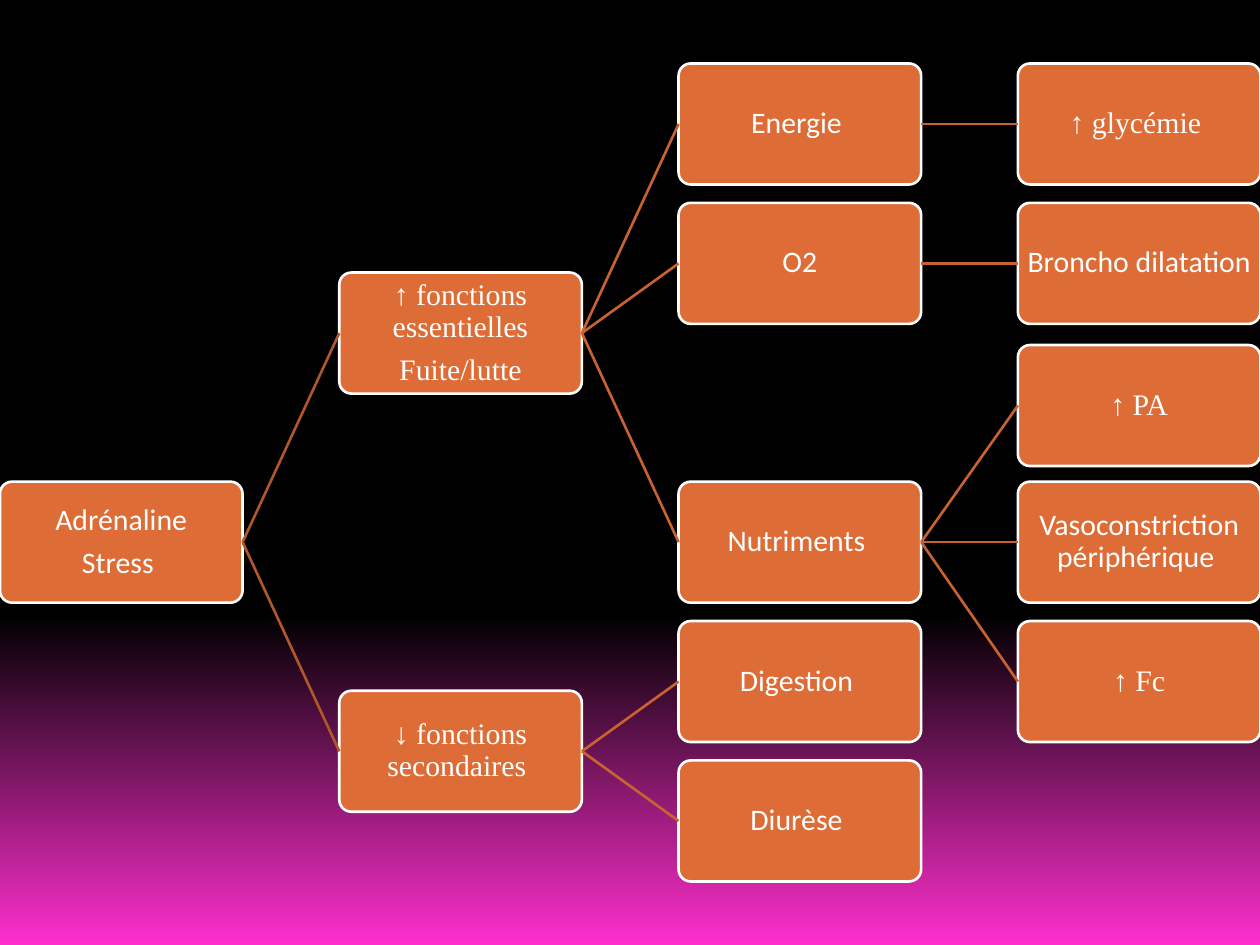
import lxml.etree
import pptx
import pptx.dml.color
import pptx.enum.shapes
import pptx.enum.text
import pptx.oxml.ns
import pptx.util

Cm, Pt = pptx.util.Cm, pptx.util.Pt
RGB = pptx.dml.color.RGBColor.from_string

# Effects of adrenaline: key -> (column, row, paragraphs)
EFFECTS = {
    "adrenaline": (0, 3, ["Adrénaline", "Stress "]),
    "essential": (1, 1.5, ["↑ fonctions essentielles", "Fuite/lutte"]),
    "secondary": (1, 4.5, ["↓ fonctions secondaires "]),
    "energy": (2, 0, ["Energie "]),
    "oxygen": (2, 1, ["O2"]),
    "nutrients": (2, 3, ["Nutriments "]),
    "digestion": (2, 4, ["Digestion "]),
    "diuresis": (2, 5, ["Diurèse "]),
    "glycaemia": (3, 0, ["↑ glycémie "]),
    "bronchi": (3, 1, ["Broncho dilatation "]),
    "pressure": (3, 2.02, ["↑ PA"]),
    "vessels": (3, 3, ["Vasoconstriction périphérique "]),
    "heart_rate": (3, 4, ["↑ Fc"]),
}
BRANCHES = {
    "adrenaline": ["essential", "secondary"],
    "essential": ["energy", "oxygen", "nutrients"],
    "secondary": ["digestion", "diuresis"],
    "energy": ["glycaemia"],
    "oxygen": ["bronchi"],
    "nutrients": ["pressure", "vessels", "heart_rate"],
}

THEME = {
    "box": RGB("DE6C36"),
    "text": RGB("FFFFFF"),
    "root_branch": RGB("B2562B"),
    "branch": RGB("C96231"),
    "background": [(0.65, RGB("000000")), (1, RGB("FF2FCD"))],
    "line": Pt(1.5),
    "size": Pt(17),
    "font": "Calibri",
    "arrow_font": "Times New Roman",
    "paragraph_gap": Pt(6),
}
FRAME_FORMAT = {
    "word_wrap": True,
    "vertical_anchor": pptx.enum.text.MSO_ANCHOR.MIDDLE,
    **{f"margin_{side}": Cm(0.1) for side in ("left", "top", "right", "bottom")},
}
PARAGRAPH_FORMAT = {
    "alignment": pptx.enum.text.PP_ALIGN.CENTER,
    "line_spacing": 0.9,
    "space_after": Pt(0),
}

# Grid, in centimetres
TOP = 1.28
COLUMN_STEP, ROW_STEP = 6.84, 2.81
BOX_WIDTH, BOX_HEIGHT = 4.89, 2.44
LEFT_SIDE, RIGHT_SIDE = 1, 3


def apply_format(target, values):
    for name, value in values.items():
        setattr(target, name, value)


def add_effect(slide, column, row, lines):
    box = slide.shapes.add_shape(
        pptx.enum.shapes.MSO_SHAPE.ROUNDED_RECTANGLE,
        Cm(column * COLUMN_STEP), Cm(TOP + row * ROW_STEP),
        Cm(BOX_WIDTH), Cm(BOX_HEIGHT))
    box.adjustments[0] = 0.1
    box.shadow.inherit = False
    box.fill.solid()
    box.fill.fore_color.rgb = THEME["box"]
    box.line.color.rgb = THEME["text"]
    box.line.width = THEME["line"]

    frame = box.text_frame
    apply_format(frame, FRAME_FORMAT)
    font_name = THEME["arrow_font" if lines[0][0] in "↑↓" else "font"]
    for index, line in enumerate(lines):
        paragraph = frame.add_paragraph() if index else frame.paragraphs[0]
        paragraph.text = line
        apply_format(paragraph, PARAGRAPH_FORMAT)
        if index:
            paragraph.space_before = THEME["paragraph_gap"]
        apply_format(paragraph.runs[0].font, {"name": font_name, "size": THEME["size"]})
        paragraph.runs[0].font.color.rgb = THEME["text"]
    return box


def add_branch(slide, cause, effect, color):
    branch = slide.shapes.add_connector(
        pptx.enum.shapes.MSO_CONNECTOR.STRAIGHT, 0, 0, 0, 0)
    branch.begin_connect(cause, RIGHT_SIDE)
    branch.end_connect(effect, LEFT_SIDE)
    branch.line.color.rgb = color
    branch.line.width = THEME["line"]
    lxml.etree.SubElement(branch._element.spPr, pptx.oxml.ns.qn("a:effectLst"))


def main():
    deck = pptx.Presentation()
    deck.slide_width, deck.slide_height = Cm(25.4), Cm(19.05)
    slide = deck.slides.add_slide(deck.slide_layouts[6])

    # Background, darkest at the top
    backdrop = slide.background.fill
    backdrop.gradient()
    backdrop.gradient_angle = 270
    for stop, (position, color) in zip(backdrop.gradient_stops, THEME["background"]):
        stop.position = position
        stop.color.rgb = color

    # Boxes, then the branches joining them
    boxes = {key: add_effect(slide, *effect) for key, effect in EFFECTS.items()}
    for cause, effects in BRANCHES.items():
        color = THEME["root_branch" if cause == "adrenaline" else "branch"]
        for effect in effects:
            add_branch(slide, boxes[cause], boxes[effect], color)

    deck.save("out.pptx")


if __name__ == "__main__":
    main()
